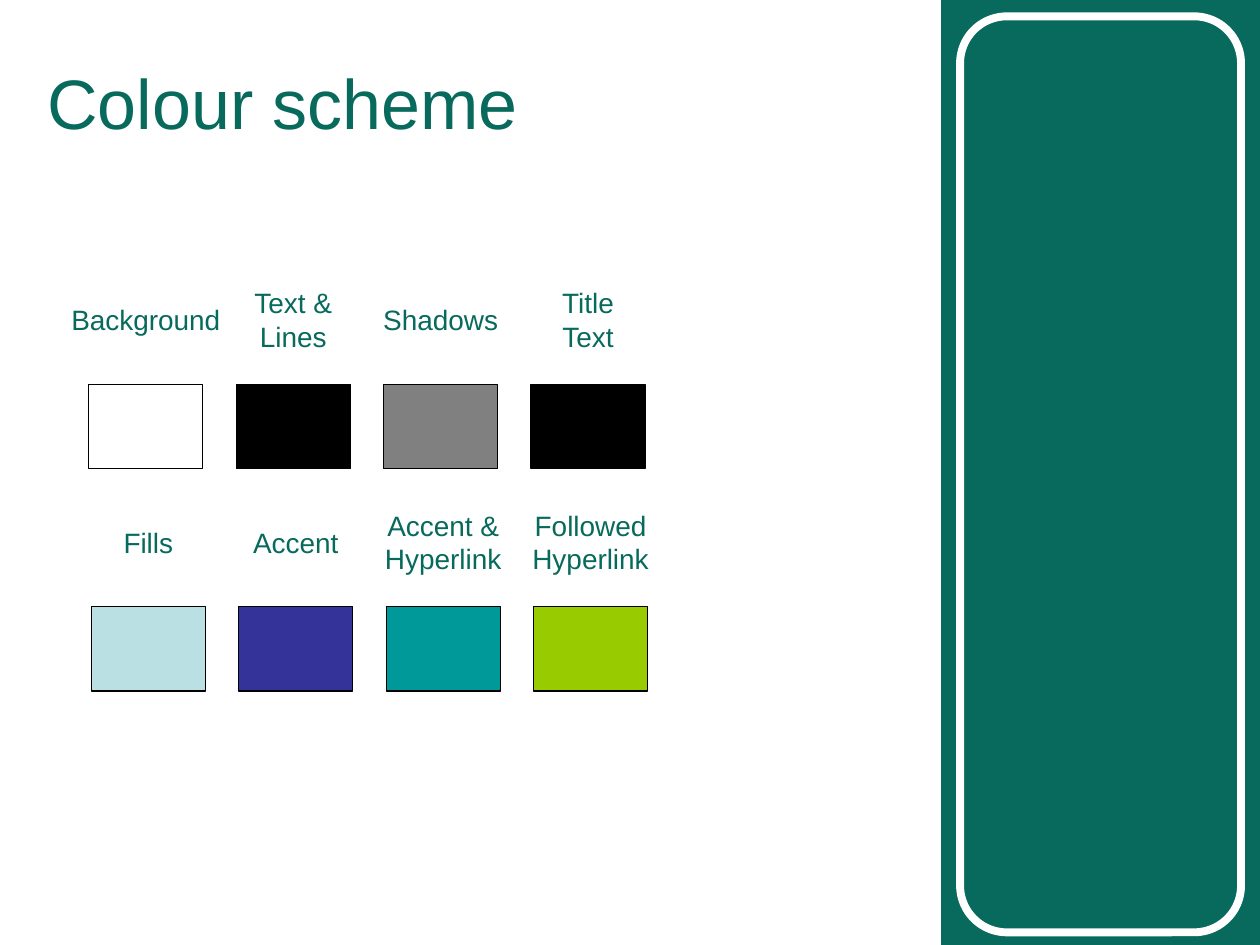
from dataclasses import dataclass
from pptx import Presentation
from pptx.dml.color import RGBColor as Rgb
from pptx.enum.shapes import MSO_SHAPE as Kind
from pptx.enum.text import MSO_ANCHOR as Anchor, MSO_AUTO_SIZE as Fit, PP_ALIGN as Align
from pptx.slide import Slide
from pptx.util import Inches, Pt

GREEN = Rgb(0x08, 0x6A, 0x5D)
WHITE = Rgb(0xFF, 0xFF, 0xFF)
BLACK = Rgb(0x00, 0x00, 0x00)
GREY = Rgb(0x80, 0x80, 0x80)
PALE = Rgb(0xBB, 0xE0, 0xE3)
BLUE = Rgb(0x33, 0x33, 0x99)
TEAL = Rgb(0x00, 0x99, 0x99)
LIME = Rgb(0x99, 0xCC, 0x00)

COLS, ROWS = 100, 75
STEP = 11.7
WIDE, HIGH = 9.05, 6.7
RISE = 5.1

SETS = [
    (7.05, 30.5, [("Background", 14, WHITE), ("Text &\nLines", 8.6, BLACK),
                  ("Shadows", 11.3, GREY), ("Title\vText", 6.5, BLACK)]),
    (7.25, 48.15, [("Fills", 6.3, PALE), ("Accent", 9, BLUE),
                   ("Accent &\nHyperlink", 11.6, TEAL),
                   ("Followed\nHyperlink", 11.6, LIME)]),
]


def write(frame, text, size, font, color, align):
    """Fill a text frame and format each of its runs."""
    frame.text = text
    for para in frame.paragraphs:
        para.alignment = align
        for run in para.runs:
            run.font.name = font
            run.font.size = Pt(size)
            run.font.color.rgb = color


@dataclass
class Deck:
    """Hold the style and the current slide."""
    slide: Slide
    font: str = "Arial"
    ink: Rgb = GREEN

    def area(self, col, row, wide, high):
        """Turn grid units into left, top, width and height."""
        return [Inches(n / 10) for n in (col, row, wide, high)]

    def shape(self, kind, spot, fill=None, line=None, weight=0.75):
        """Add a preset shape with a plain fill and line."""
        item = self.slide.shapes.add_shape(kind, *self.area(*spot))
        item.shadow.inherit = False
        if fill is None:
            item.fill.background()
        else:
            item.fill.solid()
            item.fill.fore_color.rgb = fill
        if line is None:
            item.line.fill.background()
        else:
            item.line.color.rgb = line
            item.line.width = Pt(weight)

    def title(self, text, spot):
        """Place the title above the shapes drawn so far."""
        item = self.slide.shapes.title
        item.left, item.top, item.width, item.height = self.area(*spot)
        self.slide.shapes._spTree.append(item._element)
        item.text_frame.vertical_anchor = Anchor.MIDDLE
        write(item.text_frame, text, 40, self.font, self.ink, Align.LEFT)

    def label(self, text, mid, row, wide):
        """Add a label centred on a point of the grid."""
        high = 6.4 if len(text.split()) > 1 else 3.7
        spot = self.area(mid - wide / 2, row - high / 2, wide, high)
        frame = self.slide.shapes.add_textbox(*spot).text_frame
        frame.word_wrap = False
        frame.auto_size = Fit.SHAPE_TO_FIT_TEXT
        write(frame, text, 16, self.font, self.ink, Align.CENTER)

    def swatch(self, text, wide, color, col, row):
        """Add a colour sample with its label above."""
        self.shape(Kind.RECTANGLE, (col, row, WIDE, HIGH), color, BLACK)
        self.label(text, col + WIDE / 2, row - RISE, wide)


def main():
    """Build and save the slide."""
    show = Presentation()
    show.slide_width, show.slide_height = Inches(COLS / 10), Inches(ROWS / 10)
    deck = Deck(show.slides.add_slide(show.slide_layouts[5]))
    deck.shape(Kind.RECTANGLE, (74.7, 0, 25.3, ROWS), GREEN)
    deck.shape(Kind.ROUNDED_RECTANGLE, (76.2, 1.3, 22.3, 72.7), None, WHITE, 4.5)
    deck.title("Colour scheme", (2.75, 3, 74.8, 10.1))
    for left, row, items in SETS:
        for i, (text, wide, color) in enumerate(items):
            deck.swatch(text, wide, color, left + i * STEP, row)
    show.save("out.pptx")


if __name__ == "__main__":
    main()
